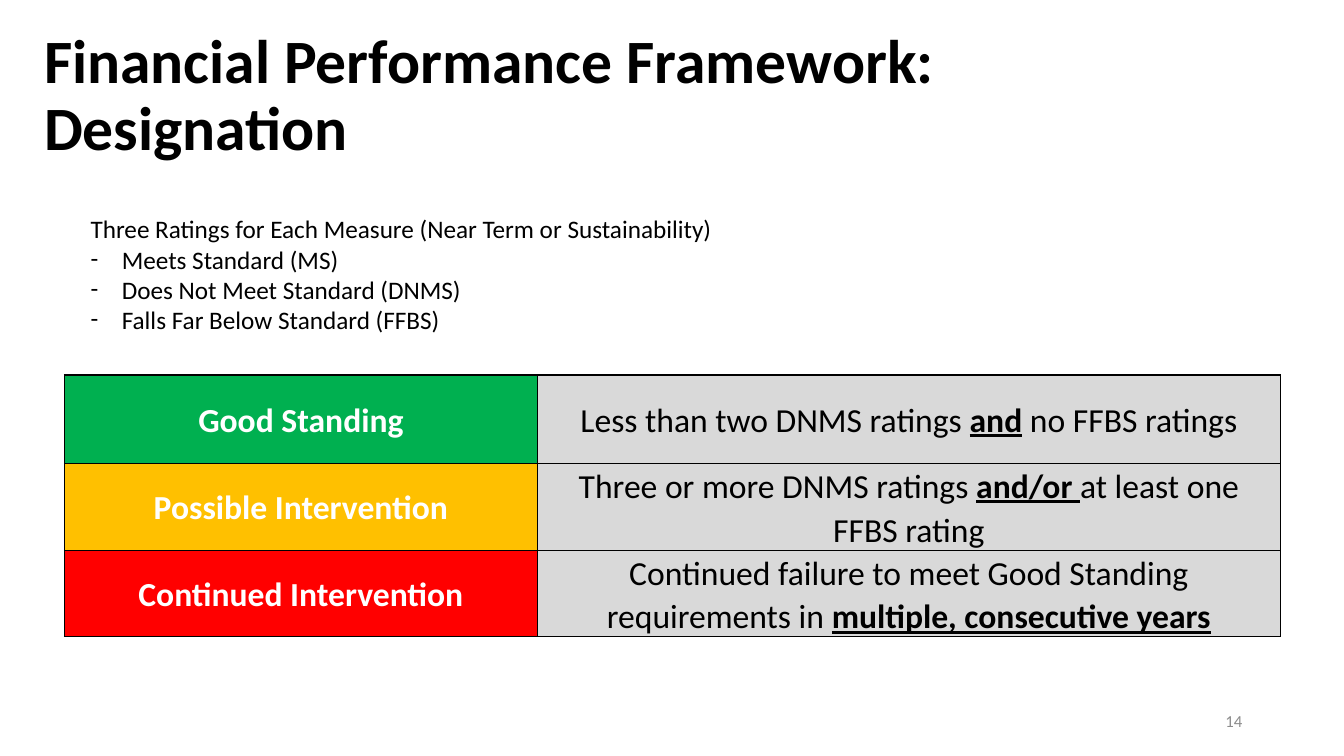
from pptx import Presentation
from pptx.dml.color import RGBColor
from pptx.enum.text import MSO_ANCHOR, PP_ALIGN
from pptx.oxml.ns import qn
from pptx.util import Inches, Pt
from lxml.etree import SubElement

BLACK = RGBColor(0x00, 0x00, 0x00)
WHITE = RGBColor(0xFF, 0xFF, 0xFF)
GREY = RGBColor(0x8C, 0x8C, 0x8C)
LIGHT_GREY = RGBColor(0xD9, 0xD9, 0xD9)
GREEN = RGBColor(0x00, 0xB0, 0x50)
AMBER = RGBColor(0xFF, 0xC0, 0x00)
RED = RGBColor(0xFF, 0x00, 0x00)

# Label, fill and rule of each designation; every second part of a rule is stressed
DESIGNATIONS = [
    ("Good Standing", GREEN,
     ["Less than two DNMS ratings ", "and", " no FFBS ratings"]),
    ("Possible Intervention", AMBER,
     ["Three or more DNMS ratings ", "and/or ", "at least one FFBS rating"]),
    ("Continued Intervention", RED,
     ["Continued failure to meet Good Standing requirements in ",
      "multiple, consecutive years"]),
]
RATINGS = ["Meets Standard (MS)", "Does Not Meet Standard (DNMS)",
           "Falls Far Below Standard (FFBS)"]


class SlideBuilder:
    """Places elements on one slide; lengths are percent of its size."""

    font = "Calibri"

    def __init__(self, deck):
        self.width, self.height = deck.slide_width, deck.slide_height
        self.slide = deck.slides.add_slide(deck.slide_layouts[6])

    def across(self, share):
        return round(self.width * share / 100)

    def down(self, share):
        return round(self.height * share / 100)

    def area(self, left, top, width, height):
        return (self.across(left), self.down(top),
                self.across(width), self.down(height))

    def style(self, span, size, color, bold=False, underline=False):
        span.font.name, span.font.size = self.font, Pt(size)
        span.font.color.rgb = color
        span.font.bold, span.font.underline = bold, underline

    def text(self, area, lines, size, color, bold=False, anchor=MSO_ANCHOR.MIDDLE,
             align=PP_ALIGN.LEFT, spacing=1.0):
        frame = self.slide.shapes.add_textbox(*self.area(*area)).text_frame
        frame.word_wrap, frame.vertical_anchor = True, anchor
        frame.text = "\n".join(lines)
        for para in frame.paragraphs:
            para.alignment, para.line_spacing = align, spacing
            self.style(para.runs[0], size, color, bold)
        return frame

    def dash(self, para, indent=0.31):
        properties = para._p.get_or_add_pPr()
        properties.set("marL", str(Inches(indent)))
        properties.set("indent", str(-Inches(indent)))
        SubElement(properties, qn("a:buFont"), typeface=self.font)
        SubElement(properties, qn("a:buChar"), char="-")

    def border(self, cell):
        properties = cell._tc.get_or_add_tcPr()
        for side in ("lnL", "lnR", "lnT", "lnB"):
            line = SubElement(properties, qn(f"a:{side}"), w=str(Pt(1)))
            fill = SubElement(line, qn("a:solidFill"))
            SubElement(fill, qn("a:srgbClr"), val=str(BLACK))

    def cell(self, cell, parts, fill, color, bold=False):
        self.border(cell)
        cell.fill.solid()
        cell.fill.fore_color.rgb = fill
        cell.vertical_anchor = MSO_ANCHOR.MIDDLE
        cell.margin_left = cell.margin_right = Inches(0.07)
        cell.margin_top = cell.margin_bottom = 0
        para = cell.text_frame.paragraphs[0]
        para.alignment, para.line_spacing = PP_ALIGN.CENTER, 1.07
        for index, part in enumerate(parts):
            stressed = index % 2 == 1
            span = para.add_run()
            span.text = part
            self.style(span, 24, color, bold or stressed, stressed)

    def table(self, left, top, columns, rows):
        area = self.area(left, top, sum(columns), sum(rows))
        table = self.slide.shapes.add_table(len(rows), len(columns), *area).table
        table.first_row = table.horz_banding = False
        for column, share in zip(table.columns, columns):
            column.width = self.across(share)
        for row, share in zip(table.rows, rows):
            row.height = self.down(share)
        return table


def main():
    deck = Presentation()
    deck.slide_width, deck.slide_height = Inches(13.33), Inches(7.5)
    page = SlideBuilder(deck)

    # Title
    page.text((2.55, 3.2, 86.27, 19.33),
              ["Financial Performance Framework: Designation"],
              44, BLACK, bold=True, spacing=0.9)

    # Designation table
    table = page.table(4.8, 49.6, [35.18, 55.29], [11.73, 11.47, 10.53])
    for row, (label, fill, rule) in enumerate(DESIGNATIONS):
        page.cell(table.cell(row, 0), [label], fill, WHITE, bold=True)
        page.cell(table.cell(row, 1), rule, LIGHT_GREY, BLACK)

    # Slide number
    page.text((70.67, 92.67, 22.5, 5.33), ["14"], 12, GREY, align=PP_ALIGN.RIGHT)

    # Ratings list
    heading = "Three Ratings for Each Measure (Near Term or Sustainability)"
    ratings = page.text((6, 27.6, 55.66, 17.47), [heading, *RATINGS],
                        18, BLACK, anchor=MSO_ANCHOR.TOP)
    for para in ratings.paragraphs[1:]:
        page.dash(para)

    deck.save("out.pptx")


if __name__ == "__main__":
    main()
